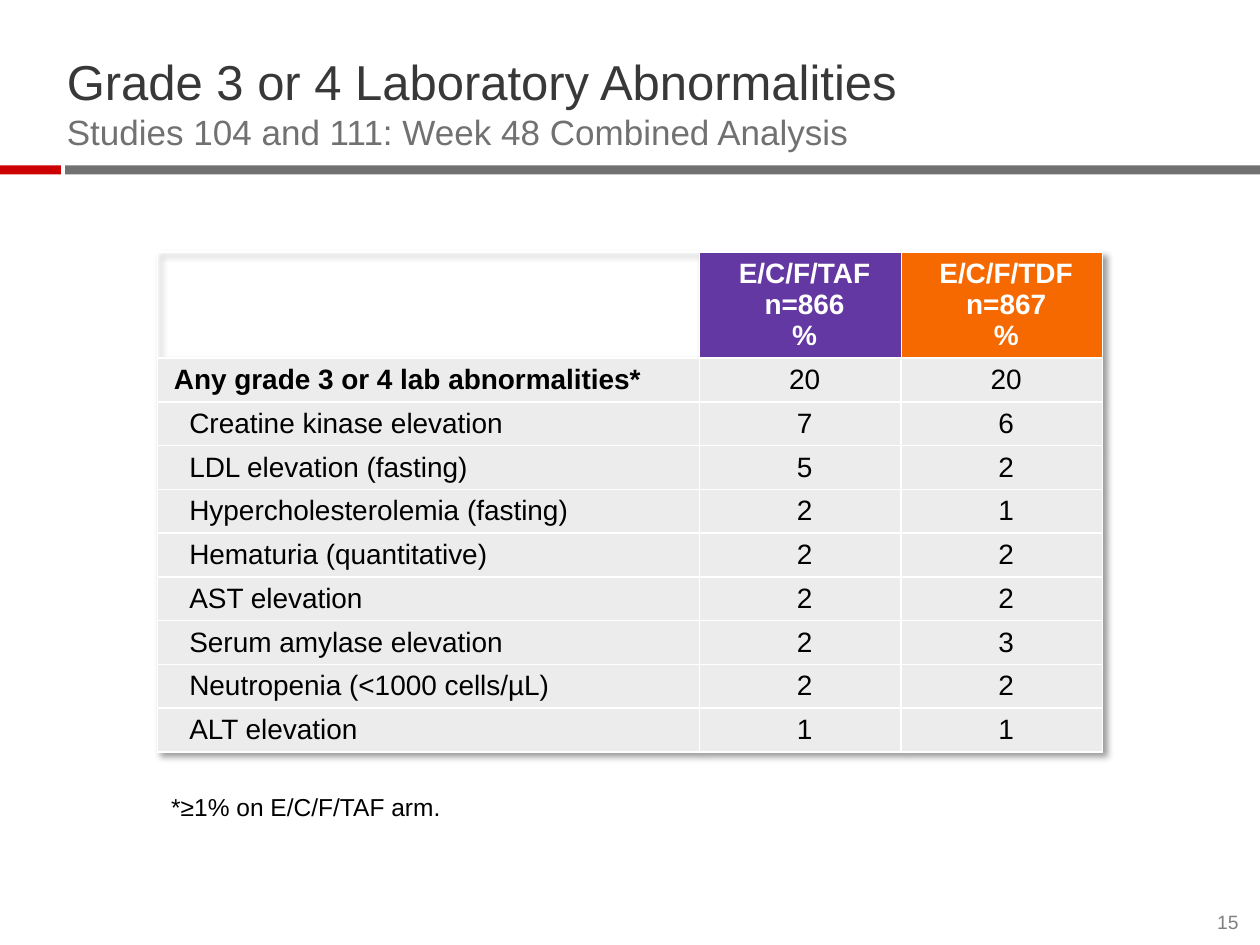
import pptx
import pptx.util
import pptx.dml.color
import pptx.enum.shapes
import pptx.enum.text
import pptx.oxml
import pptx.oxml.ns

Pt = pptx.util.Pt
ALIGN = pptx.enum.text.PP_ALIGN
ANCHOR = pptx.enum.text.MSO_ANCHOR
COLORS = {
    "title": "383838", "gray": "717171", "red": "CC0000",
    "purple": "6338A2", "orange": "F66900", "cell": "ECECEC",
    "white": "FFFFFF", "black": "000000", "number": "7F7F7F",
}
NAMESPACE = pptx.oxml.ns.nsdecls("a")


def add_run(paragraph, text, size, color, bold=False):
    run = paragraph.add_run()
    run.text = text
    run.font.name = "Arial"
    run.font.size = Pt(size)
    run.font.bold = bold
    run.font.color.rgb = pptx.dml.color.RGBColor.from_string(COLORS[color])


def add_border(cell, side, width):
    cell._tc.get_or_add_tcPr().append(pptx.oxml.parse_xml(
        f'<a:ln{side} {NAMESPACE} w="{Pt(width)}"><a:solidFill>'
        f'<a:srgbClr val="{COLORS["white"]}"/></a:solidFill></a:ln{side}>'))


presentation = pptx.Presentation()
presentation.slide_width = Pt(720)
presentation.slide_height = Pt(540)
slide = presentation.slides.add_slide(presentation.slide_layouts[5])

# Rule under the title
for left, width, color in [(37.2, 682.8, "gray"), (0, 34.8, "red")]:
    bar = slide.shapes.add_shape(
        pptx.enum.shapes.MSO_SHAPE.RECTANGLE, Pt(left), Pt(94.5), Pt(width), Pt(5.2))
    bar.shadow.inherit = False
    bar.fill.solid()
    bar.fill.fore_color.rgb = pptx.dml.color.RGBColor.from_string(COLORS[color])
    bar.line.fill.background()

# Title and subtitle
title = slide.shapes.title
title.left, title.top, title.width, title.height = Pt(38.2), Pt(33.8), Pt(648), Pt(53.3)
frame = title.text_frame
frame.margin_left = frame.margin_right = frame.margin_top = frame.margin_bottom = 0
frame.vertical_anchor = ANCHOR.BOTTOM
frame.auto_size = pptx.enum.text.MSO_AUTO_SIZE.NONE
paragraph = frame.paragraphs[0]
paragraph.alignment = ALIGN.LEFT
add_run(paragraph, "Grade 3 or 4 Laboratory Abnormalities", 28, "title")
paragraph.add_line_break()
add_run(paragraph, "Studies 104 and 111: Week 48 Combined Analysis", 20, "gray")

# Table of abnormalities
rows = [
    ("", ("E/C/F/TAF", "n=866", "%"), ("E/C/F/TDF", "n=867", "%")),
    ("Any grade 3 or 4 lab abnormalities*", "20", "20"),
    ("Creatine kinase elevation", "7", "6"),
    ("LDL elevation (fasting)", "5", "2"),
    ("Hypercholesterolemia (fasting)", "2", "1"),
    ("Hematuria (quantitative)", "2", "2"),
    ("AST elevation", "2", "2"),
    ("Serum amylase elevation", "2", "3"),
    ("Neutropenia (<1000 cells/µL)", "2", "2"),
    ("ALT elevation", "1", "1"),
]
header_fills = [None, "purple", "orange"]
header_height, row_height = 60.6, 25
table = slide.shapes.add_table(
    len(rows), 3, Pt(90), Pt(144), Pt(540),
    Pt(header_height + row_height * (len(rows) - 1))).table
table.horz_banding = False
table._tbl.tblPr.insert(0, pptx.oxml.parse_xml(
    f'<a:effectLst {NAMESPACE}><a:outerShdw blurRad="{Pt(4)}" dist="{Pt(3)}" '
    'dir="2700000" algn="tl" rotWithShape="0"><a:prstClr val="black">'
    '<a:alpha val="40000"/></a:prstClr></a:outerShdw></a:effectLst>'))
for column, width in zip(table.columns, [309.6, 115.2, 115.2]):
    column.width = Pt(width)

for row_index, row in enumerate(rows):
    header = row_index == 0
    table.rows[row_index].height = Pt(header_height if header else row_height)
    for column_index, content in enumerate(row):
        cell = table.cell(row_index, column_index)
        label = column_index == 0
        # Detail rows are indented below the "Any grade" row
        cell.margin_left = Pt(18.2 if label and row_index > 1 else 9.4)
        cell.margin_right = Pt(4.3)
        cell.margin_top = cell.margin_bottom = Pt(3.6)
        cell.vertical_anchor = ANCHOR.BOTTOM if header else ANCHOR.MIDDLE

        if column_index > 0:
            add_border(cell, "L", 0.5 if header else 1)
        if column_index < 2:
            add_border(cell, "R", 0.5 if header else 1)
        if not header:
            add_border(cell, "T", 1)
        if row_index < len(rows) - 1:
            add_border(cell, "B", 1)

        fill = header_fills[column_index] if header else "cell"
        if fill is None:
            cell.fill.background()
            continue
        cell.fill.solid()
        cell.fill.fore_color.rgb = pptx.dml.color.RGBColor.from_string(COLORS[fill])

        paragraph = cell.text_frame.paragraphs[0]
        paragraph.alignment = ALIGN.LEFT if label else ALIGN.CENTER
        if header:
            name, count, unit = content
            add_run(paragraph, name, 16, "white", True)
            paragraph = cell.text_frame.add_paragraph()
            paragraph.alignment = ALIGN.CENTER
            add_run(paragraph, count, 16, "white", True)
            paragraph.add_line_break()
            add_run(paragraph, unit, 16, "white", True)
        else:
            add_run(paragraph, content, 16, "black", label and row_index == 1)

# Footnote
footnote = slide.shapes.add_textbox(Pt(90.7), Pt(449.3), Pt(540), Pt(24.5))
footnote.text_frame.word_wrap = True
add_run(footnote.text_frame.paragraphs[0], "*≥1% on E/C/F/TAF arm.", 14, "black")

# Slide number
number = slide.shapes.add_textbox(Pt(688.3), Pt(520.6), Pt(19.5), Pt(13))
frame = number.text_frame
frame.word_wrap = True
frame.margin_left = frame.margin_right = frame.margin_top = frame.margin_bottom = 0
frame.vertical_anchor = ANCHOR.BOTTOM
frame.paragraphs[0].alignment = ALIGN.RIGHT
add_run(frame.paragraphs[0], "15", 11, "number")

presentation.save("out.pptx")
